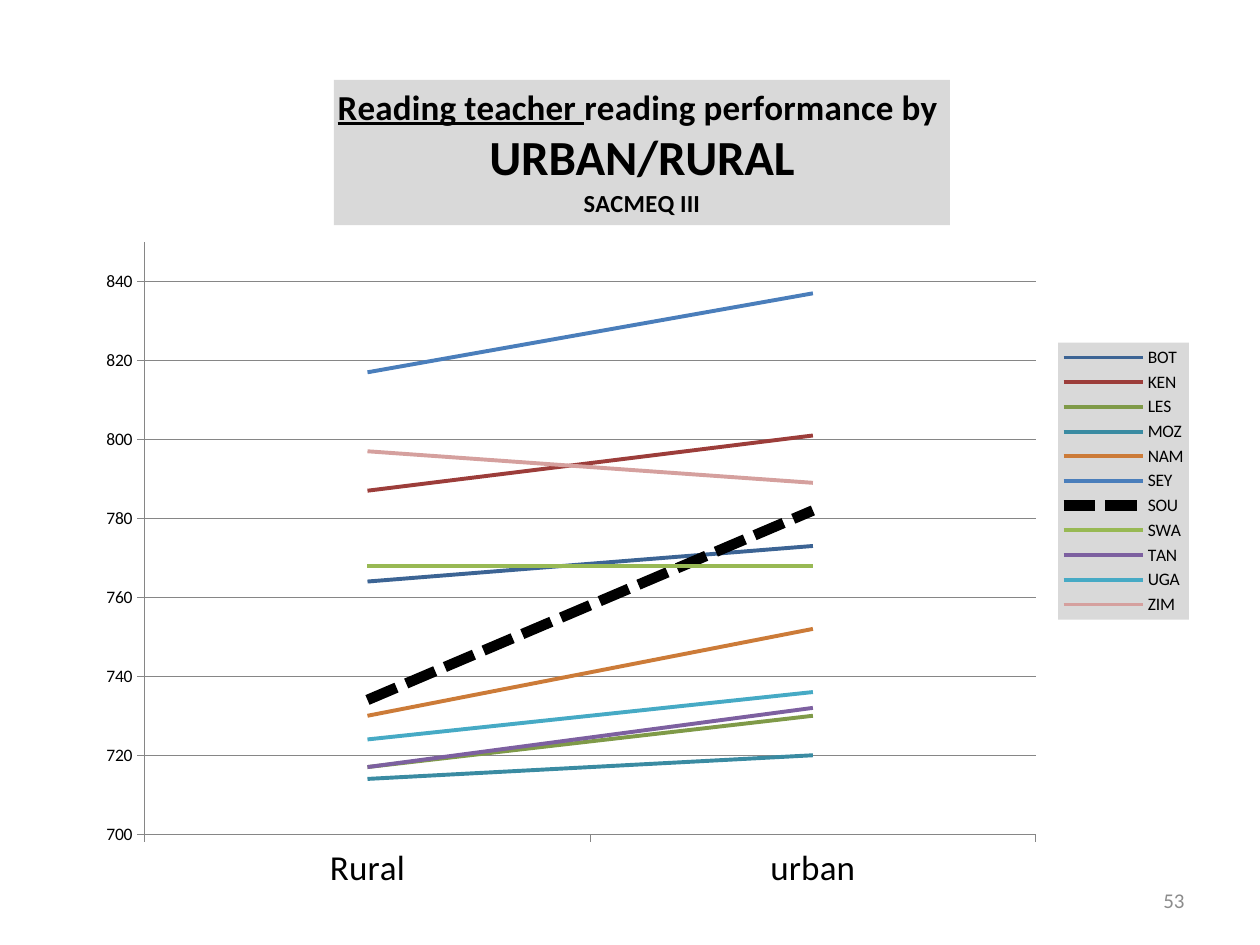
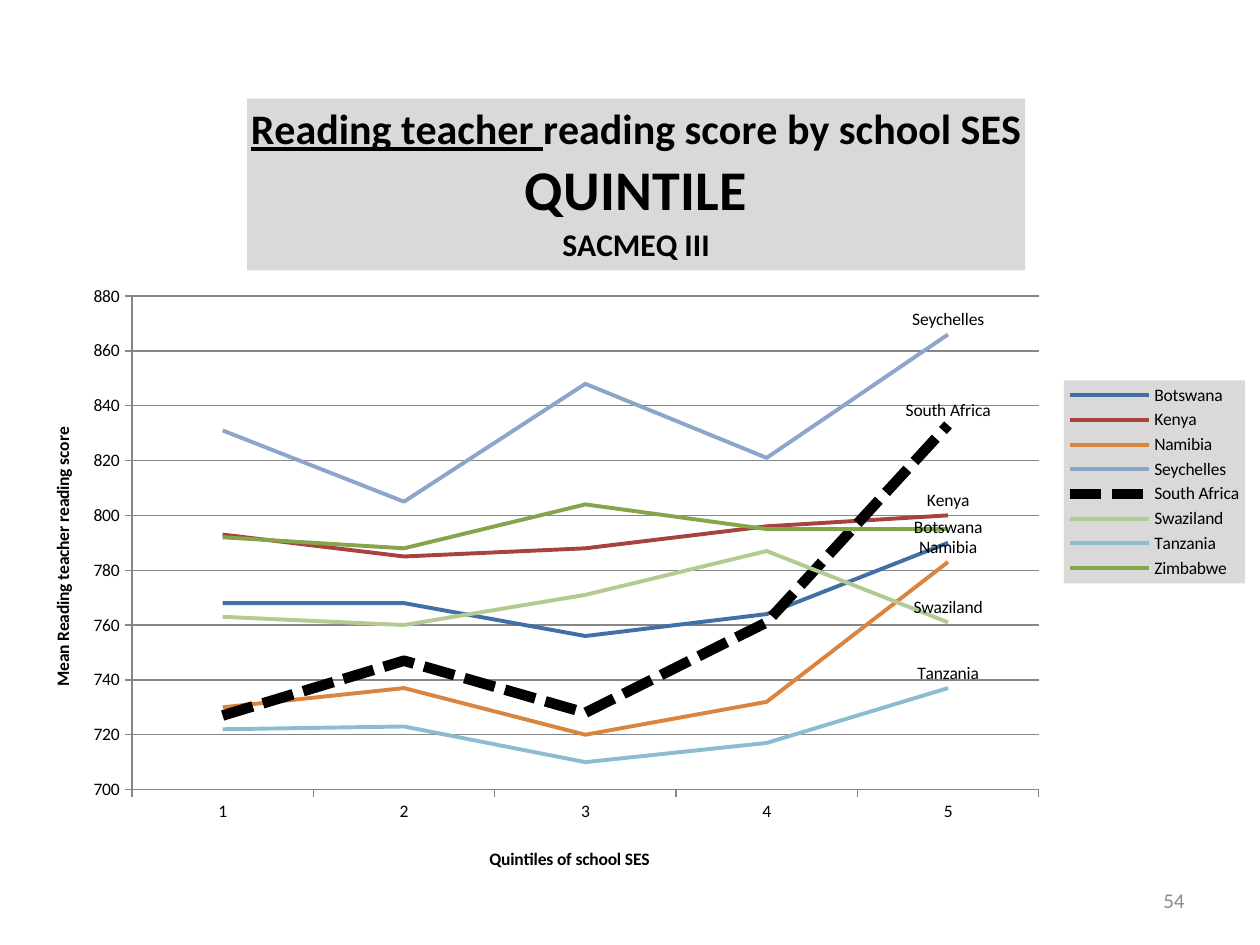
from lxml import etree
from pptx import Presentation
from pptx.chart.data import CategoryChartData
from pptx.dml.color import RGBColor
from pptx.enum import chart as charts, dml, text
from pptx.oxml.ns import qn
from pptx.util import Cm, Pt

FONT = "Calibri"
BLACK = RGBColor(0, 0, 0)
GRID = RGBColor(0x86, 0x86, 0x86)
NUMBER_GREY = RGBColor(0x8C, 0x8C, 0x8C)
PANEL = RGBColor(0xD9, 0xD9, 0xD9)
NAVY = RGBColor(0x3C, 0x64, 0x94)
MAROON = RGBColor(0x9C, 0x3D, 0x3A)
OLIVE = RGBColor(0x7F, 0x9A, 0x48)
TEAL = RGBColor(0x3A, 0x8B, 0xA2)
RUST = RGBColor(0xCC, 0x7B, 0x38)
BLUE = RGBColor(0x4A, 0x7E, 0xBB)
GREEN = RGBColor(0x98, 0xB9, 0x54)
PURPLE = RGBColor(0x7D, 0x60, 0xA0)
AQUA = RGBColor(0x46, 0xAA, 0xC5)
PINK = RGBColor(0xD5, 0xA0, 0x9E)
STEEL = RGBColor(0x41, 0x6F, 0xA6)
RED = RGBColor(0xA8, 0x42, 0x3F)
ORANGE = RGBColor(0xDB, 0x84, 0x3D)
PALE_BLUE = RGBColor(0x8E, 0xA5, 0xCB)
PALE_GREEN = RGBColor(0xB3, 0xCA, 0x92)
PALE_AQUA = RGBColor(0x8D, 0xBC, 0xD0)
MOSS = RGBColor(0x86, 0xA4, 0x4A)

PAGES = [
    {
        "number": "53",
        "title": [
            (20, [("Reading teacher ", True), ("reading performance by ", False)]),
            (28, [("URBAN/RURAL", False)]),
            (14, [("SACMEQ III", False)]),
        ],
        "categories": ["Rural", "urban"],
        "category_size": 20,
        "maximum": 850,
        "series": [
            ("BOT", NAVY, [764, 773]),
            ("KEN", MAROON, [787, 801]),
            ("LES", OLIVE, [717, 730]),
            ("MOZ", TEAL, [714, 720]),
            ("NAM", RUST, [730, 752]),
            ("SEY", BLUE, [817, 837]),
            ("SOU", BLACK, [734, 782]),
            ("SWA", GREEN, [768, 768]),
            ("TAN", PURPLE, [717, 732]),
            ("UGA", AQUA, [724, 736]),
            ("ZIM", PINK, [797, 789]),
        ],
        "labelled": [],
        "axis_titles": {},
        "frame": (1.7, 1.12, 22.5, 17.17),
        "places": {
            "c:chart/c:title": (6.73, 1.61),
            "c:chart/c:plotArea": (2.92, 4.88, 17.96, 11.94),
            "c:chart/c:legend": (21.33, 6.91, 2.64, 5.58),
        },
    },
    {
        "number": "54",
        "title": [
            (24, [("Reading teacher ", True), ("reading score by school SES", False)]),
            (32, [("QUINTILE", False)]),
            (18, [("SACMEQ III", False)]),
        ],
        "categories": ["1", "2", "3", "4", "5"],
        "category_size": 10,
        "maximum": 880,
        "series": [
            ("Botswana", STEEL, [768, 768, 756, 764, 790]),
            ("Kenya", RED, [793, 785, 788, 796, 800]),
            ("Namibia", ORANGE, [730, 737, 720, 732, 783]),
            ("Seychelles", PALE_BLUE, [831, 805, 848, 821, 866]),
            ("South Africa", BLACK, [727, 747, 728, 761, 833]),
            ("Swaziland", PALE_GREEN, [763, 760, 771, 787, 761]),
            ("Tanzania", PALE_AQUA, [722, 723, 710, 717, 737]),
            ("Zimbabwe", MOSS, [792, 788, 804, 795, 795]),
        ],
        "labelled": ["Botswana", "Kenya", "Namibia", "Seychelles",
                     "South Africa", "Swaziland", "Tanzania"],
        "axis_titles": {"category": "Quintiles of school SES",
                        "value": "Mean Reading teacher reading score"},
        "frame": (0.33, 1.52, 24.97, 16.41),
        "places": {
            "c:chart/c:title": (4.98, 1.99),
            "c:chart/c:plotArea": (2.66, 5.97, 18.28, 9.95),
            "c:chart/c:legend": (21.45, 7.67, 3.65, 4.09),
            ".//c:catAx/c:title": (9.8, 17.03),
            ".//c:valAx/c:title": (0.97, 8.55),
        },
    },
]


def style(font, size, color=BLACK, bold=False):
    """Set the shared typeface with a size, colour and weight."""
    font.name, font.size, font.bold = FONT, Pt(size), bold
    font.color.rgb = color


def add_span(para, words, size, color=BLACK, bold=False):
    """Add one styled run to a paragraph."""
    span = para.add_run()
    span.text = words
    style(span.font, size, color, bold)
    return span


def place(part, frame, spot):
    """Pin a chart part at a slide position given in centimetres."""
    for old in part.findall(qn("c:layout")):
        part.remove(old)
    layout = etree.Element(qn("c:layout"))
    manual = etree.SubElement(layout, qn("c:manualLayout"))
    left, top, width, height = frame
    settings = []
    if part.tag == qn("c:plotArea"):
        settings.append(("layoutTarget", "inner"))
        part.insert(0, layout)
    else:
        part.find(qn("c:overlay")).addprevious(layout)
    settings += [("xMode", "edge"), ("yMode", "edge"),
                 ("x", (spot[0] - left) / width), ("y", (spot[1] - top) / height)]
    if len(spot) == 4:
        settings += [("w", spot[2] / width), ("h", spot[3] / height)]
    for name, value in settings:
        shown = value if isinstance(value, str) else f"{value:.4f}"
        etree.SubElement(manual, qn(f"c:{name}"), val=shown)


def write_title(chart, lines):
    """Write the chart title on its grey panel."""
    title = chart.chart_title
    title.format.fill.solid()
    title.format.fill.fore_color.rgb = PANEL
    frame = title.text_frame
    for index, (size, spans) in enumerate(lines):
        para = frame.add_paragraph() if index else frame.paragraphs[0]
        for words, underlined in spans:
            add_span(para, words, size, bold=True).font.underline = underlined


def format_axes(chart, content):
    """Format both axes, the gridlines and the axis titles."""
    axes = {"category": chart.category_axis, "value": chart.value_axis}
    for name, axis in axes.items():
        axis.major_tick_mark = charts.XL_TICK_MARK.OUTSIDE
        axis.minor_tick_mark = charts.XL_TICK_MARK.NONE
        axis.format.line.color.rgb = GRID
        axis.format.line.width = Pt(0.75)
        style(axis.tick_labels.font, 10)
        if name in content["axis_titles"]:
            para = axis.axis_title.text_frame.paragraphs[0]
            add_span(para, content["axis_titles"][name], 10, bold=True)
    axes["category"].tick_labels.font.size = Pt(content["category_size"])
    value = axes["value"]
    value.minimum_scale, value.maximum_scale = 700, content["maximum"]
    value.major_unit = 20
    value.has_major_gridlines = True
    value.major_gridlines.format.line.color.rgb = GRID
    value.major_gridlines.format.line.width = Pt(0.75)
    for body in chart.element.xpath(".//c:valAx/c:title//a:bodyPr"):
        body.set("rot", "-5400000")
        body.set("vert", "horz")


def format_series(chart, content):
    """Colour the lines and name the last point of labelled series."""
    for series, (name, color, values) in zip(chart.plots[0].series, content["series"]):
        series.smooth = False
        line = series.format.line
        line.color.rgb = color
        line.width = Pt(2.25)
        if color == BLACK:
            line.width = Pt(6)
            line.dash_style = dml.MSO_LINE.SQUARE_DOT
        if name in content["labelled"]:
            label = series.points[len(values) - 1].data_label
            style(label.font, 10)
            label.position = charts.XL_LABEL_POSITION.ABOVE
    for flag in chart.element.xpath(".//c:dLbls//c:showVal"):
        flag.set("val", "0")
    for flag in chart.element.xpath(".//c:dLbl/c:showSerName"):
        flag.set("val", "1")


def format_legend(chart):
    """Show the legend at the right on its grey panel."""
    chart.has_legend = True
    chart.legend.position = charts.XL_LEGEND_POSITION.RIGHT
    chart.legend.include_in_layout = False
    style(chart.legend.font, 10)
    panel = etree.Element(qn("c:spPr"))
    fill = etree.SubElement(panel, qn("a:solidFill"))
    etree.SubElement(fill, qn("a:srgbClr"), val=str(PANEL))
    chart.element.xpath(".//c:legend/c:overlay")[0].addnext(panel)


def add_line_chart(page, content):
    """Add the line chart of one slide."""
    data = CategoryChartData(number_format="0")
    data.categories = content["categories"]
    for name, _, values in content["series"]:
        data.add_series(name, values)
    frame = content["frame"]
    chart = page.shapes.add_chart(
        charts.XL_CHART_TYPE.LINE, *map(Cm, frame), data).chart
    style(chart.font, 10)
    write_title(chart, content["title"])
    format_axes(chart, content)
    format_series(chart, content)
    format_legend(chart)
    for query, spot in content["places"].items():
        place(chart.element.xpath(query)[0], frame, spot)


def add_page_number(page, number):
    """Add the grey page number at the lower right."""
    box = page.shapes.add_textbox(Cm(18.2), Cm(17.65), Cm(5.93), Cm(1.01))
    box.text_frame.word_wrap = True
    box.text_frame.vertical_anchor = text.MSO_ANCHOR.MIDDLE
    para = box.text_frame.paragraphs[0]
    para.alignment = text.PP_ALIGN.RIGHT
    add_span(para, number, 12, NUMBER_GREY)


def main():
    """Build and save the deck."""
    deck = Presentation()
    deck.slide_width, deck.slide_height = Cm(25.4), Cm(19.05)
    for content in PAGES:
        page = deck.slides.add_slide(deck.slide_layouts[6])
        add_page_number(page, content["number"])
        add_line_chart(page, content)
    deck.save("out.pptx")


if __name__ == "__main__":
    main()
